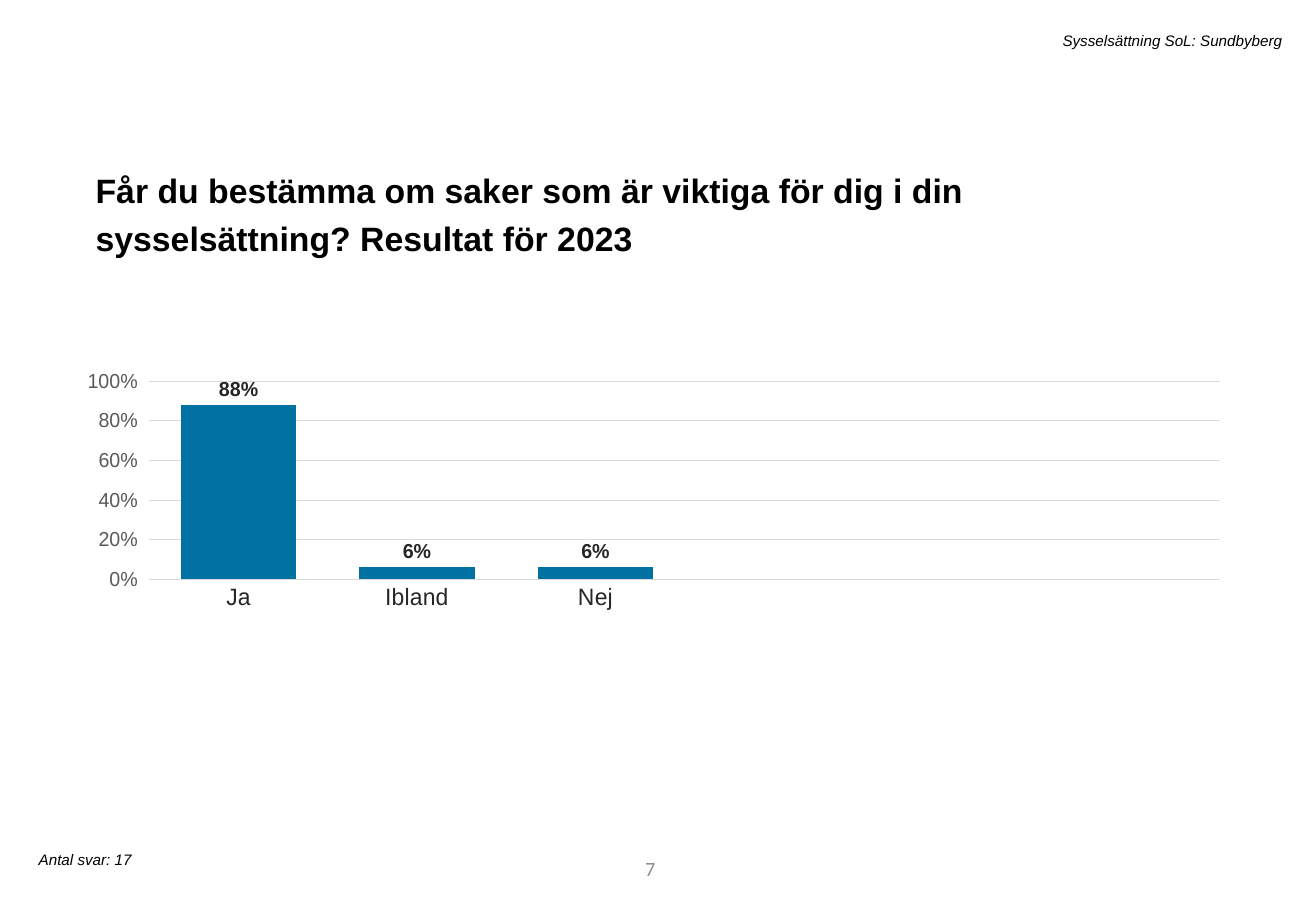
from pptx import Presentation
from pptx import util as u
from pptx.chart.data import CategoryChartData
from pptx.dml.color import RGBColor
from pptx.enum import chart as ch, text
from pptx.oxml import parse_xml
from pptx.oxml.ns import nsdecls


def rgb(value):
    return RGBColor.from_string(value)


def style_font(font, size, color, name="Arial", bold=False, italic=False):
    font.name = name
    font.size = u.Pt(size)
    font.bold = bold
    font.italic = italic
    font.color.rgb = rgb(color)


def style_line(line, color="D9D9D9"):
    line.color.rgb = rgb(color)
    line.width = u.Pt(0.75)


def add_text(s, box, content, size, color="000000", align=text.PP_ALIGN.LEFT,
             anchor=text.MSO_ANCHOR.TOP, grow=True, wrap=True, **font):
    sp = s.shapes.add_textbox(*(u.Cm(length) for length in box))
    tf = sp.text_frame
    tf.word_wrap = wrap
    tf.vertical_anchor = anchor
    if grow:
        tf.auto_size = text.MSO_AUTO_SIZE.SHAPE_TO_FIT_TEXT
    p = tf.paragraphs[0]
    p.alignment = align
    r = p.add_run()
    r.text = content
    style_font(r.font, size, color, **font)
    return p


def set_plot_layout(chart, x, y, w, h):
    plot_area = chart.plots[0]._element.getparent()
    for old in plot_area.xpath("c:layout"):
        plot_area.remove(old)
    parts = [("layoutTarget", "inner"), ("xMode", "edge"), ("yMode", "edge"),
             ("x", x), ("y", y), ("w", w), ("h", h)]
    inner = "".join(f'<c:{tag} val="{val}"/>' for tag, val in parts)
    plot_area.insert(0, parse_xml(
        f'<c:layout {nsdecls("c")}><c:manualLayout>{inner}</c:manualLayout></c:layout>'))


def style_axes(chart):
    cat = chart.category_axis
    cat.major_tick_mark = ch.XL_TICK_MARK.NONE
    style_font(cat.tick_labels.font, 14, "262626")
    style_line(cat.format.line)

    val = chart.value_axis
    val.minimum_scale, val.maximum_scale, val.major_unit = 0, 1, 0.2
    val.major_tick_mark = ch.XL_TICK_MARK.OUTSIDE
    val.tick_labels.number_format = "0%"
    val.tick_labels.number_format_is_linked = False
    style_font(val.tick_labels.font, 12, "595959")
    val.format.line.fill.background()
    style_line(val.major_gridlines.format.line)


def add_column_chart(s, box, categories, values):
    data = CategoryChartData(number_format="0%")
    data.categories = categories
    data.add_series("Series 1", values)
    frame = s.shapes.add_chart(ch.XL_CHART_TYPE.COLUMN_CLUSTERED,
                               *(u.Cm(length) for length in box), data)
    chart = frame.chart
    chart.has_title = False
    chart.has_legend = False
    style_font(chart.font, 10, "000000")
    style_axes(chart)

    plot = chart.plots[0]
    plot.gap_width = 55
    plot.vary_by_categories = False
    fill = plot.series[0].format.fill
    fill.solid()
    fill.fore_color.rgb = rgb("0071A1")
    labels = plot.series[0].data_labels
    labels.show_value = True
    labels.position = ch.XL_LABEL_POSITION.OUTSIDE_END
    labels.number_format = "0%"
    labels.number_format_is_linked = False
    style_font(labels.font, 12, "262626", bold=True)
    return chart


def main():
    prs = Presentation()
    prs.slide_width, prs.slide_height = u.Cm(27.51), u.Cm(19.05)
    s = prs.slides.add_slide(prs.slide_layouts[6])
    right = text.PP_ALIGN.RIGHT

    add_text(s, (7.75, 17.65, 6.2, 1.02), "7", 12, "8C8C8C", right,
             text.MSO_ANCHOR.MIDDLE, grow=False, name="Calibri")
    chart = add_column_chart(s, (1.83, 6.43, 23.88, 10.03),
                             ["Ja", "Ibland", "Nej", "", "", ""],
                             [0.88, 0.06, 0.06, None, None, None])
    set_plot_layout(chart, 0.025, 0.154, 0.966, 0.413)
    title = add_text(s, (1.75, 3.25, 23.88, 1.19),
                     "Får du bestämma om saker som är viktiga för dig i din "
                     "sysselsättning? Resultat för 2023", 20, bold=True)
    title.line_spacing = 1.2
    title.space_before = u.Pt(10)
    add_text(s, (0.56, 17.65, 7.21, 0.64), "Antal svar: 17", 9, wrap=False, italic=True)
    add_text(s, (4.55, 0.53, 22.5, 0.64), "Sysselsättning SoL: Sundbyberg", 9,
             align=right, italic=True)
    prs.save("out.pptx")


if __name__ == "__main__":
    main()
